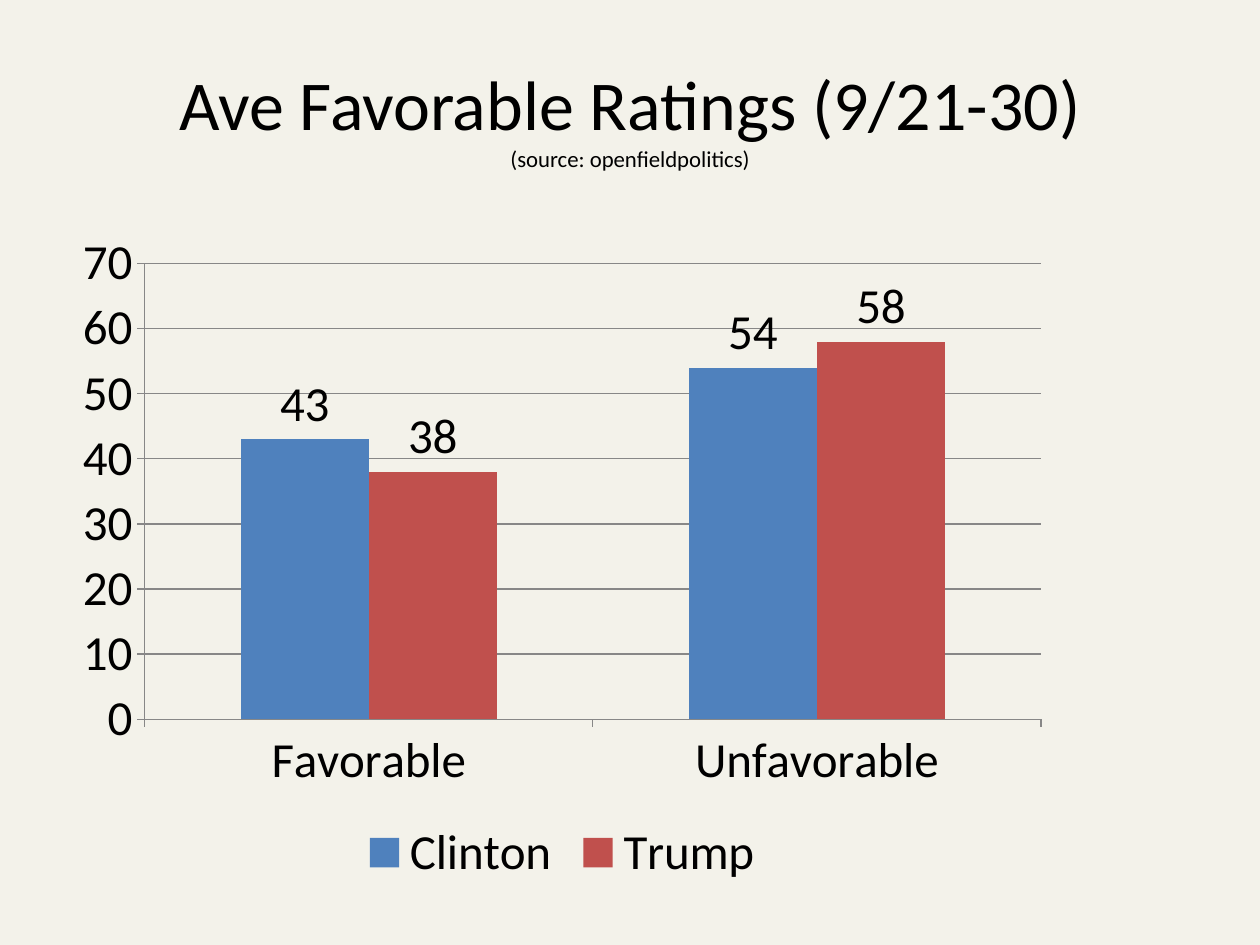
from dataclasses import dataclass

from pptx import Presentation
from pptx.chart.data import CategoryChartData
from pptx.dml.color import RGBColor
from pptx.enum.chart import XL_CHART_TYPE as ChartType
from pptx.enum.chart import XL_LABEL_POSITION as LabelPos
from pptx.enum.chart import XL_LEGEND_POSITION as LegendPos
from pptx.enum.chart import XL_TICK_MARK as Tick
from pptx.enum.text import MSO_ANCHOR, PP_ALIGN
from pptx.util import Inches, Pt


@dataclass(frozen=True)
class Theme:
    font: str = "Calibri"
    background: RGBColor = RGBColor(0xF3, 0xF2, 0xEA)
    text: RGBColor = RGBColor(0, 0, 0)
    axis: RGBColor = RGBColor(0x87, 0x87, 0x87)
    clinton: RGBColor = RGBColor(0x4F, 0x81, 0xBD)
    trump: RGBColor = RGBColor(0xC0, 0x50, 0x4D)
    title_size: Pt = Pt(40)
    source_size: Pt = Pt(13)
    chart_size: Pt = Pt(28)


THEME = Theme()
CATEGORIES = ("Favorable", "Unfavorable")
RATINGS = (
    ("Clinton", (43, 54), THEME.clinton),
    ("Trump", (38, 58), THEME.trump),
)


def style_font(font, size):
    font.name = THEME.font
    font.size = size
    font.color.rgb = THEME.text


def add_title(slide, box, title, source):
    tf = slide.shapes.add_textbox(*box).text_frame
    tf.word_wrap = True
    tf.vertical_anchor = MSO_ANCHOR.MIDDLE
    p = tf.paragraphs[0]
    p.alignment = PP_ALIGN.CENTER
    style_font(p.font, THEME.title_size)
    r = p.add_run()
    r.text = title
    style_font(r.font, THEME.title_size)
    p.add_line_break()
    r = p.add_run()
    r.text = source
    style_font(r.font, THEME.source_size)


def add_ratings_chart(slide, box):
    data = CategoryChartData(number_format="General")
    data.categories = CATEGORIES
    for name, values, _ in RATINGS:
        data.add_series(name, values)
    chart = slide.shapes.add_chart(ChartType.COLUMN_CLUSTERED, *box, data).chart
    style_font(chart.font, THEME.chart_size)
    chart.has_title = False
    chart.has_legend = True
    chart.legend.position = LegendPos.BOTTOM
    chart.legend.include_in_layout = False

    for axis in (chart.category_axis, chart.value_axis):
        axis.major_tick_mark = Tick.OUTSIDE
        axis.minor_tick_mark = Tick.NONE
        axis.format.line.color.rgb = THEME.axis
        axis.format.line.width = Pt(0.75)
    value_axis = chart.value_axis
    value_axis.minimum_scale = 0
    value_axis.maximum_scale = 70
    value_axis.major_unit = 10
    grid = value_axis.major_gridlines.format.line
    grid.color.rgb = THEME.axis
    grid.width = Pt(0.75)

    plot = chart.plots[0]
    plot.gap_width = 150
    plot.overlap = 0
    plot.vary_by_categories = False
    for series, (_, _, color) in zip(plot.series, RATINGS):
        series.format.fill.solid()
        series.format.fill.fore_color.rgb = color
        series.invert_if_negative = False
        labels = series.data_labels
        labels.show_value = True
        labels.position = LabelPos.OUTSIDE_END
        style_font(labels.font, THEME.chart_size)


def main():
    prs = Presentation()
    prs.slide_width = Inches(10)
    prs.slide_height = Inches(7.5)
    slide = prs.slides.add_slide(prs.slide_layouts[6])
    fill = slide.background.fill
    fill.solid()
    fill.fore_color.rgb = THEME.background
    add_title(
        slide,
        (Inches(0.5), Inches(0.3), Inches(9), Inches(1.25)),
        "Ave Favorable Ratings (9/21-30)",
        "(source: openfieldpolitics)",
    )
    add_ratings_chart(
        slide, (Inches(0.5), Inches(1.75), Inches(7.92), Inches(5.33))
    )
    prs.save("out.pptx")


if __name__ == "__main__":
    main()
